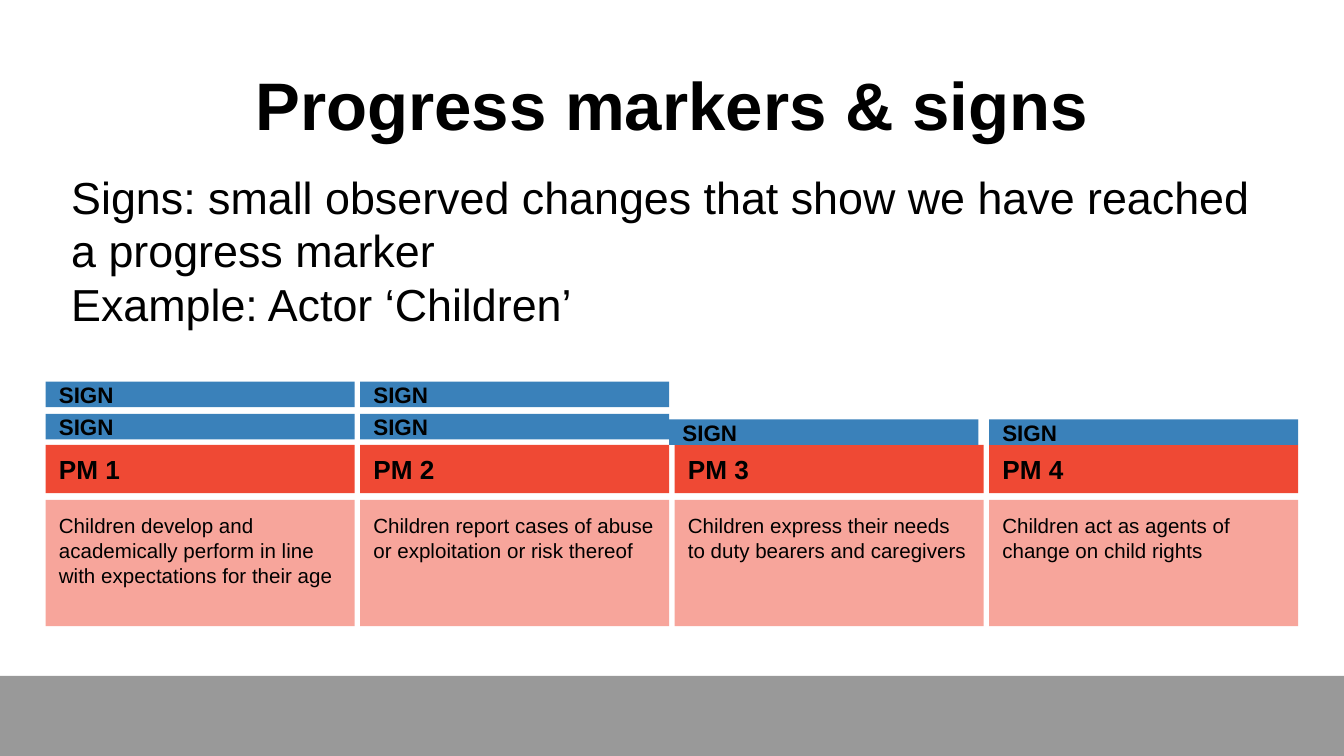
from pptx import Presentation
from pptx.dml.color import RGBColor as RGB
from pptx.enum.shapes import MSO_SHAPE as Shape
from pptx.enum.text import MSO_ANCHOR as Anchor, MSO_AUTO_SIZE as Auto, PP_ALIGN as Align
from pptx.oxml.ns import qn
from pptx.util import Inches, Pt
from lxml.etree import SubElement

BLACK = RGB(0x00, 0x00, 0x00)
GRAY = RGB(0x99, 0x99, 0x99)
RED = RGB(0xEF, 0x49, 0x34)
BLUE = RGB(0x3A, 0x81, 0xBA)

PAGE_W = 10
PAGE_H = PAGE_W * 9 / 16
WIDE, GAP, COLS = 2.3, 0.04, 4
STEP = WIDE + GAP
LEFT = (PAGE_W - COLS * WIDE - (COLS - 1) * GAP) / 2  # centred columns
SIGN_H = 0.19

# Marker name, description, shift and top of each sign
MARKERS = [
    ("PM 1", "Children develop and academically perform in line with "
             "expectations for their age", [(0, 3.08), (0, 2.84)]),
    ("PM 2", "Children report cases of abuse or exploitation or risk thereof",
     [(0, 3.08), (0, 2.84)]),
    ("PM 3", "Children express their needs to duty bearers and caregivers",
     [(-GAP, 3.12)]),
    ("PM 4", "Children act as agents of change on child rights", [(0, 3.12)]),
]


def write(frame, text, size=11, bold=False, align=Align.LEFT,
          anchor=Anchor.TOP):
    """Fill a text frame, one paragraph per line of text."""
    frame.word_wrap = True
    frame.auto_size = Auto.NONE
    frame.vertical_anchor = anchor
    frame.margin_left = frame.margin_right = Inches(0.1)
    frame.margin_top = frame.margin_bottom = Inches(0.1)
    frame.text = text
    for para in frame.paragraphs:
        props = para._p.get_or_add_pPr()
        props.set("marL", "0")
        props.set("indent", "0")
        SubElement(props, qn("a:buNone"))
        para.alignment = align
        para.line_spacing = 1.0
        para.space_before = Pt(0)
        for run in para.runs:
            font = run.font
            font.name, font.size, font.bold = "Arial", Pt(size), bold
            font.color.rgb = BLACK


class Deck:
    def __init__(self):
        self.prs = Presentation()
        self.prs.slide_width = Inches(PAGE_W)
        self.prs.slide_height = Inches(PAGE_H)
        self.slide = self.prs.slides.add_slide(self.prs.slide_layouts[1])

    def holder(self, index, box, text, **style):
        item = self.slide.placeholders[index]
        item.left, item.top, item.width, item.height = map(Inches, box)
        write(item.text_frame, text, **style)

    def block(self, box, fill, text="", alpha=None, **style):
        item = self.slide.shapes.add_shape(Shape.RECTANGLE, *map(Inches, box))
        item.shadow.inherit = False
        item.line.fill.background()
        item.fill.solid()
        item.fill.fore_color.rgb = fill
        if alpha:
            color = item._element.spPr.find(qn("a:solidFill"))[0]
            SubElement(color, qn("a:alpha")).set("val", str(alpha * 1000))
        if text:
            write(item.text_frame, text, **style)


def main():
    deck = Deck()

    # Footer band
    deck.block((0, 5.03, PAGE_W, PAGE_H - 5.03), GRAY)

    # Title and introduction
    deck.holder(0, (0.5, 0.23, 9, 0.94), "Progress markers & signs", size=36,
                bold=True, align=Align.CENTER, anchor=Anchor.BOTTOM)
    deck.holder(1, (0.43, 1.16, 9, 0.66),
                "Signs: small observed changes that show we have reached "
                "a progress marker\nExample: Actor ‘Children’", size=24)

    # One column per progress marker
    for col, (name, text, signs) in enumerate(MARKERS):
        x = LEFT + col * STEP
        deck.block((x, 3.31, WIDE, 0.36), RED, name, size=14, bold=True,
                   anchor=Anchor.MIDDLE)
        deck.block((x, 3.72, WIDE, 0.94), RED, text, alpha=49)
        for shift, top in signs:
            deck.block((x + shift, top, WIDE, SIGN_H), BLUE, "SIGN", size=12,
                       bold=True, anchor=Anchor.MIDDLE)

    deck.prs.save("out.pptx")


if __name__ == "__main__":
    main()
